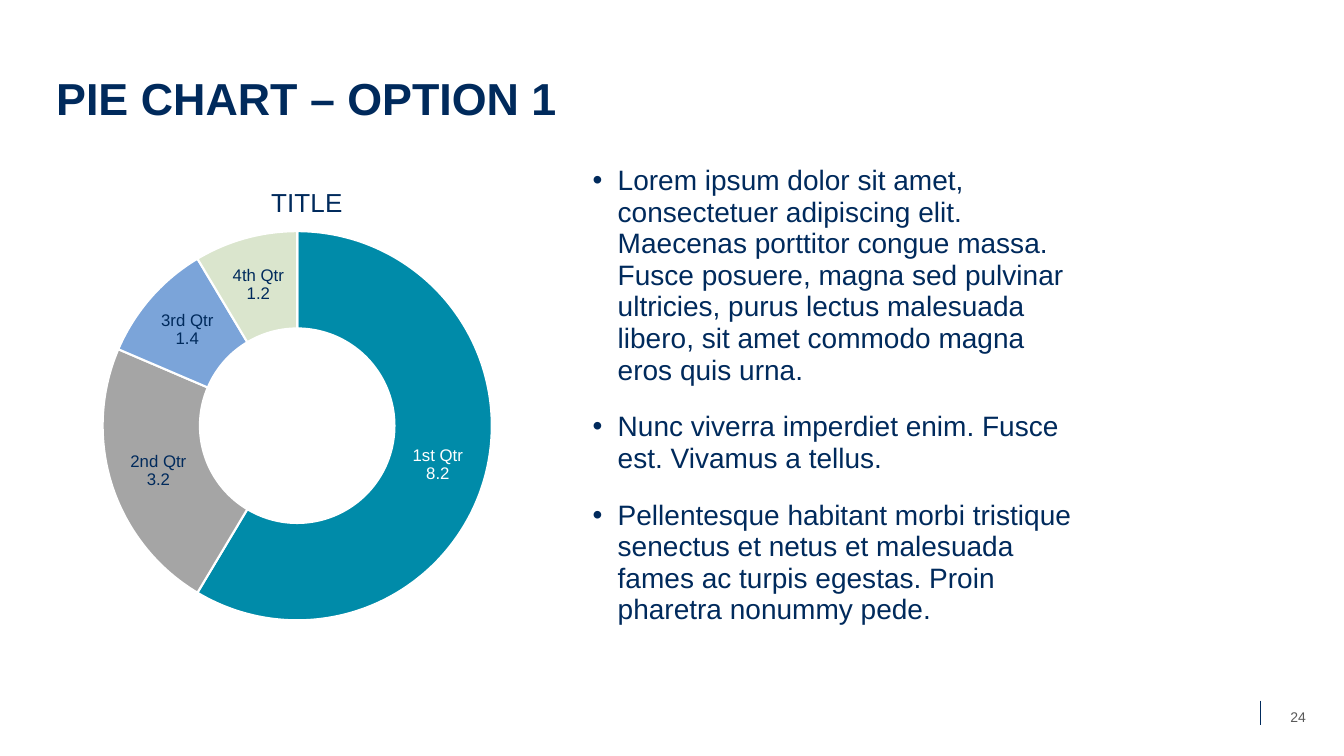
from lxml.etree import SubElement
from pptx import Presentation
from pptx.chart.data import CategoryChartData
from pptx.dml.color import RGBColor
from pptx.enum.chart import XL_CHART_TYPE
from pptx.enum.shapes import MSO_CONNECTOR
from pptx.enum.text import MSO_ANCHOR, PP_ALIGN
from pptx.oxml import parse_xml
from pptx.oxml.ns import nsdecls, qn
from pptx.util import Pt

NAVY = RGBColor(0x00, 0x2A, 0x5C)
TEAL = RGBColor(0x00, 0x8B, 0xA9)
GRAY = RGBColor(0xA5, 0xA5, 0xA5)
BLUE = RGBColor(0x7B, 0xA4, 0xD9)
SAGE = RGBColor(0xDA, 0xE5, 0xCD)
DIM = RGBColor(0x59, 0x59, 0x59)
WHITE = RGBColor(0xFF, 0xFF, 0xFF)
FACE = "Arial"

SALES = [("1st Qtr", 8.2, TEAL), ("2nd Qtr", 3.2, GRAY),
         ("3rd Qtr", 1.4, BLUE), ("4th Qtr", 1.2, SAGE)]
POINTS = [
    "Lorem ipsum dolor sit amet, consectetuer adipiscing elit. Maecenas "
    "porttitor congue massa. Fusce posuere, magna sed pulvinar ultricies, "
    "purus lectus malesuada libero, sit amet commodo magna eros quis urna.",
    "Nunc viverra imperdiet enim. Fusce est. Vivamus a tellus.",
    "Pellentesque habitant morbi tristique senectus et netus et malesuada "
    "fames ac turpis egestas. Proin pharetra nonummy pede.",
]


def style(font, size, color, bold=False):
    font.name, font.size, font.bold = FACE, Pt(size), bold
    font.color.rgb = color


def write(slide, box, lines, size=20, color=NAVY, bold=False, align=PP_ALIGN.LEFT,
          anchor=MSO_ANCHOR.TOP, lead=None, gap=0, bullet=False):
    frame = slide.shapes.add_textbox(*map(Pt, box)).text_frame
    frame.word_wrap = True
    frame.vertical_anchor = anchor
    for i, line in enumerate(lines):
        para = frame.add_paragraph() if i else frame.paragraphs[0]
        para.alignment = align
        if lead:
            para.line_spacing = lead
        if i and gap:
            para.space_before = Pt(gap)
        if bullet:
            props = para._p.get_or_add_pPr()
            props.set("marL", str(Pt(18)))
            props.set("indent", str(-Pt(18)))
            SubElement(props, qn("a:buFont"), typeface=FACE)
            SubElement(props, qn("a:buChar"), char="•")
        run = para.add_run()
        run.text = line
        style(run.font, size, color, bold)


def lay_out(node, index, inner=False, **sizes):
    """Fix a chart part's place, as fractions of the chart."""
    for old in node.findall(qn("c:layout")):
        node.remove(old)
    modes = '<c:layoutTarget val="inner"/>' if inner else ""
    modes += '<c:xMode val="edge"/><c:yMode val="edge"/>'
    vals = "".join(f'<c:{key} val="{val}"/>' for key, val in sizes.items())
    node.insert(index, parse_xml(
        f'<c:layout {nsdecls("c")}><c:manualLayout>{modes}{vals}'
        '</c:manualLayout></c:layout>'))


def split(labels):
    """Put category and value on separate lines."""
    labels.find(qn("c:showCatName")).set("val", "1")
    mark = parse_xml(f'<c:separator {nsdecls("c")}>\n</c:separator>')
    last = labels.find(qn("c:showBubbleSize"))
    if last is None:
        last = labels.find(qn("c:showPercent"))
    last.addnext(mark)


def draw_ring(slide, box):
    data = CategoryChartData()
    data.categories = [name for name, _, _ in SALES]
    data.add_series("Series 1", [val for _, val, _ in SALES])
    chart = slide.shapes.add_chart(
        XL_CHART_TYPE.DOUGHNUT, *map(Pt, box), data).chart
    style(chart.font, 10, NAVY)
    chart.has_legend = False

    # Chart title
    chart.has_title = True
    run = chart.chart_title.text_frame.paragraphs[0].add_run()
    run.text = "TITLE"
    style(run.font, 18.6, NAVY)
    lay_out(chart.chart_title._element, 1, x=0.43, y=0.04)

    # Ring and slices
    plot = chart.plots[0]
    plot.vary_by_categories = True
    plot._element.find(qn("c:holeSize")).set("val", "65")
    lay_out(plot._element.getparent(), 0, inner=True,
            x=0.11, y=0.14, w=0.76, h=0.78)
    series = plot.series[0]
    for i, (_, _, color) in enumerate(SALES):
        form = series.points[i].format
        form.fill.solid()
        form.fill.fore_color.rgb = color
        form.line.color.rgb = WHITE
        form.line.width = Pt(1.5)

    # Labels, white on the dark slice
    labels = series.data_labels
    labels.show_value = True
    labels.show_category_name = True
    style(labels.font, 12, NAVY)
    style(series.points[0].data_label.font, 12, WHITE)
    group = labels._element
    split(group)
    split(group.find(qn("c:dLbl")))


def draw_foot(slide, box):
    left, top, _, _ = box
    x, y = left - 10, top + 3
    rule = slide.shapes.add_connector(
        MSO_CONNECTOR.STRAIGHT, Pt(x), Pt(y), Pt(x), Pt(y + 17.3))
    rule.line.color.rgb = NAVY
    rule.line.width = Pt(0.5)
    SubElement(rule._element.spPr, qn("a:effectLst"))
    write(slide, box, ["24"], size=10, color=DIM,
          align=PP_ALIGN.CENTER, anchor=MSO_ANCHOR.MIDDLE)


def main():
    deck = Presentation()
    deck.slide_width, deck.slide_height = Pt(960), Pt(540)
    slide = deck.slides.add_slide(deck.slide_layouts[6])
    left, top, wide, high = 33.12, 114.48, 365.76, 357.84

    # Heading, chart, text and page number
    write(slide, (left, 23.76, 748.8, 69.12), ["PIE CHART – OPTION 1"],
          size=32, bold=True, anchor=MSO_ANCHOR.BOTTOM, lead=0.9)
    draw_ring(slide, (left, top, wide, high))
    write(slide, (416.16, top, wide, high), POINTS,
          lead=0.94, gap=18, bullet=True)
    draw_foot(slide, (910, 497.5, 34.56, 28.8))
    deck.save("out.pptx")


if __name__ == "__main__":
    main()
